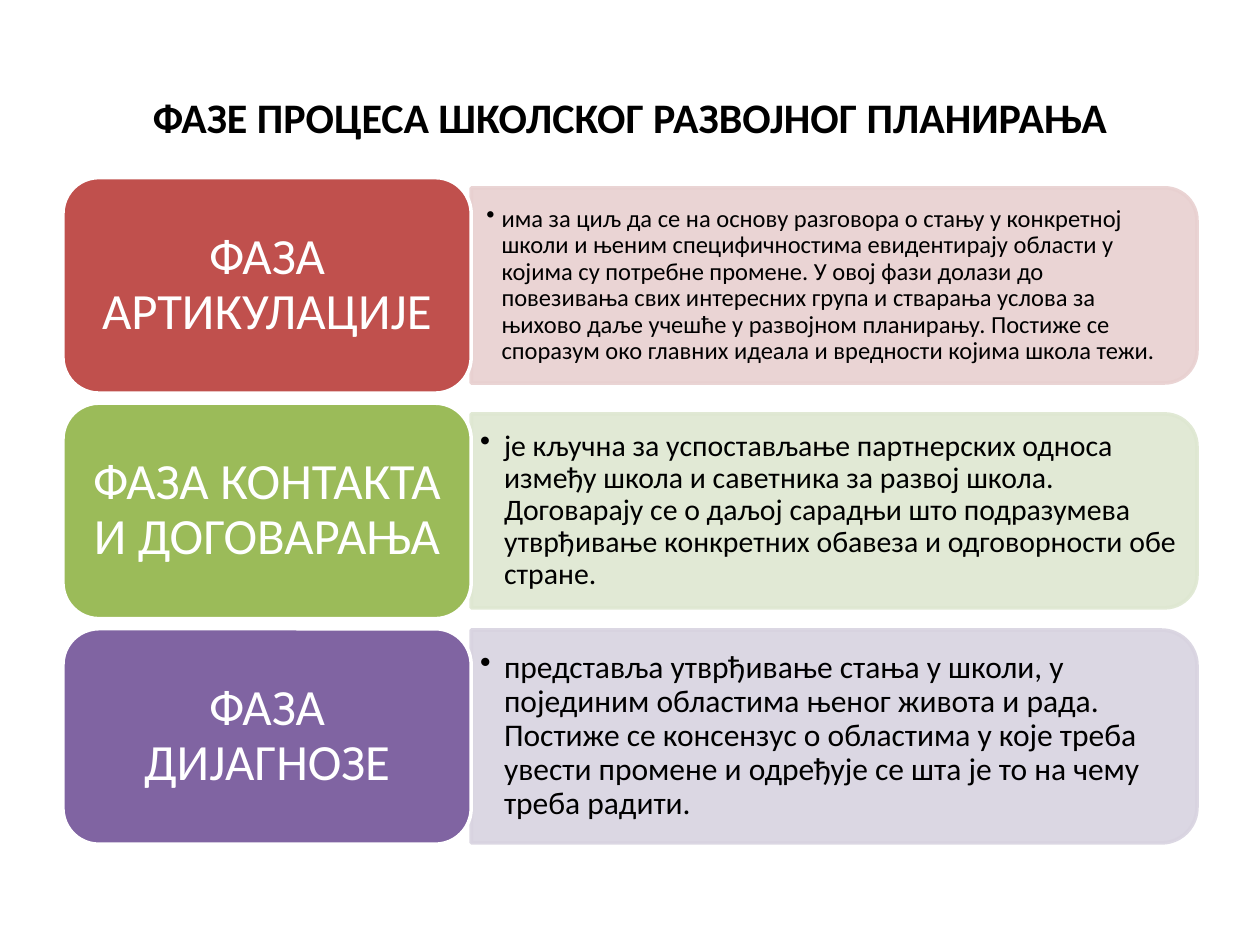
import pptx
import pptx.dml.color
import pptx.enum.shapes
import pptx.enum.text
import pptx.oxml.ns
import pptx.util
from lxml import etree

Inches, Pt = pptx.util.Inches, pptx.util.Pt
SHAPES = pptx.enum.shapes.MSO_SHAPE
ALIGN = pptx.enum.text.PP_ALIGN
MIDDLE = pptx.enum.text.MSO_ANCHOR.MIDDLE
qn = pptx.oxml.ns.qn

TITLE = "ФАЗЕ ПРОЦЕСА ШКОЛСКОГ РАЗВОЈНОГ ПЛАНИРАЊА"
COLORS = {
    "text": "000000", "white": "FFFFFF",
    "red": "C0504D", "red_tint": "E8D0D0",
    "green": "9BBB59", "green_tint": "DEE7D1",
    "purple": "8064A2", "purple_tint": "D8D3E0",
}
PHASES = [
    {"label": "ФАЗА АРТИКУЛАЦИЈЕ", "color": "red", "panel_height": 1.55,
     "size": 14, "indent": 0.12, "insets": (0.12, 0.06),
     "text": "има за циљ да се на основу разговора о стању у конкретној школи и њеним "
             "специфичностима евидентирају области у којима су потребне промене. У овој "
             "фази долази до повезивања свих интересних група и стварања услова за "
             "њихово даље учешће у развојном планирању. Постиже се споразум око главних "
             "идеала и вредности којима школа тежи."},
    {"label": "ФАЗА КОНТАКТА И ДОГОВАРАЊА", "color": "green", "panel_height": 1.54,
     "size": 17, "indent": 0.19, "insets": (0.07, 0.04),
     "text": "је кључна за успостављање партнерских односа између школа и саветника за "
             "развој школа. Договарају се о даљој сарадњи што подразумева утврђивање "
             "конкретних обавеза и одговорности обе стране."},
    {"label": "ФАЗА ДИЈАГНОЗЕ", "color": "purple", "panel_height": 1.69,
     "size": 18, "indent": 0.19, "insets": (0.07, 0.04),
     "text": "представља утврђивање стања у школи, у појединим областима њеног живота и "
             "рада. Постиже се консензус о областима у које треба увести промене и "
             "одређује се шта је то на чему треба радити."},
]

SLIDE_WIDTH, SLIDE_HEIGHT = 10, 7.5
MARGIN = 0.05 * SLIDE_WIDTH
CONTENT_WIDTH = SLIDE_WIDTH - 2 * MARGIN
LABEL_WIDTH = 0.36 * CONTENT_WIDTH
PANEL_WIDTH = CONTENT_WIDTH - LABEL_WIDTH
PANEL_LEFT = MARGIN + LABEL_WIDTH
ROWS_TOP, ROW_HEIGHT, ROW_GAP = 1.41, 1.71, 0.08
TEXT_TRIM = 0.08  # keeps the text clear of the panel's round corners


def rgb(name):
    return pptx.dml.color.RGBColor.from_string(COLORS[name])


def write(shape, text, size, color, insets, align, bold=False):
    """Fill the shape's text frame with one formatted paragraph and return it."""
    frame = shape.text_frame
    horizontal, vertical = map(Inches, insets)
    frame_format = {"word_wrap": True, "vertical_anchor": MIDDLE,
                    "margin_left": horizontal, "margin_right": horizontal,
                    "margin_top": vertical, "margin_bottom": vertical}
    for name, value in frame_format.items():
        setattr(frame, name, value)
    paragraph = frame.paragraphs[0]
    paragraph.alignment = align
    run = paragraph.add_run()
    run.text = text
    for name, value in {"name": "Calibri", "size": Pt(size), "bold": bold}.items():
        setattr(run.font, name, value)
    run.font.color.rgb = rgb(color)
    return paragraph


def add_box(slide, kind, box, fill, line):
    shape = slide.shapes.add_shape(kind, *map(Inches, box))
    shape.shadow.inherit = False
    shape.fill.solid()
    shape.fill.fore_color.rgb = rgb(fill)
    shape.line.color.rgb = rgb(line)
    shape.line.width = Pt(2)
    return shape


def add_panel(slide, phase, center):
    """Add the tinted panel, turned so that its round corners face right."""
    height = phase["panel_height"]
    tint = phase["color"] + "_tint"
    left = PANEL_LEFT + (PANEL_WIDTH - height) / 2
    panel = add_box(slide, SHAPES.ROUND_2_SAME_RECTANGLE,
                    (left, center - PANEL_WIDTH / 2, height, PANEL_WIDTH), tint, tint)
    panel.rotation = 90
    for color in panel._element.spPr.iter(qn("a:srgbClr")):
        etree.SubElement(color, qn("a:alpha"), val="90000")


def add_description(slide, phase, center):
    height = phase["panel_height"] - 2 * TEXT_TRIM
    box = (PANEL_LEFT, center - height / 2, PANEL_WIDTH - TEXT_TRIM, height)
    textbox = slide.shapes.add_textbox(*map(Inches, box))
    paragraph = write(textbox, phase["text"], phase["size"], "text",
                      phase["insets"], ALIGN.LEFT)
    paragraph.line_spacing = 0.9
    properties = paragraph._p.get_or_add_pPr()
    indent = Inches(phase["indent"])
    properties.set("marL", str(indent))
    properties.set("indent", str(-indent))
    etree.SubElement(properties, qn("a:buChar"), char="•")


def add_label(slide, phase, top):
    label = add_box(slide, SHAPES.ROUNDED_RECTANGLE,
                    (MARGIN, top, LABEL_WIDTH, ROW_HEIGHT), phase["color"], "white")
    paragraph = write(label, phase["label"], 29, "white", (0.12, 0.06), ALIGN.CENTER)
    paragraph.line_spacing = 0.9


def main():
    presentation = pptx.Presentation()
    presentation.slide_width = Inches(SLIDE_WIDTH)
    presentation.slide_height = Inches(SLIDE_HEIGHT)
    slide = presentation.slides.add_slide(presentation.slide_layouts.get_by_name("Title Only"))

    title = slide.shapes.title
    title_box = {"left": MARGIN, "top": 0.3, "width": CONTENT_WIDTH, "height": 1.25}
    for name, value in title_box.items():
        setattr(title, name, Inches(value))
    write(title, TITLE, 24, "text", (0.1, 0.05), ALIGN.CENTER, bold=True)

    for row, phase in enumerate(PHASES):
        top = ROWS_TOP + row * (ROW_HEIGHT + ROW_GAP)
        center = top + ROW_HEIGHT / 2
        add_panel(slide, phase, center)
        add_description(slide, phase, center)
        add_label(slide, phase, top)

    presentation.save("out.pptx")


if __name__ == "__main__":
    main()
